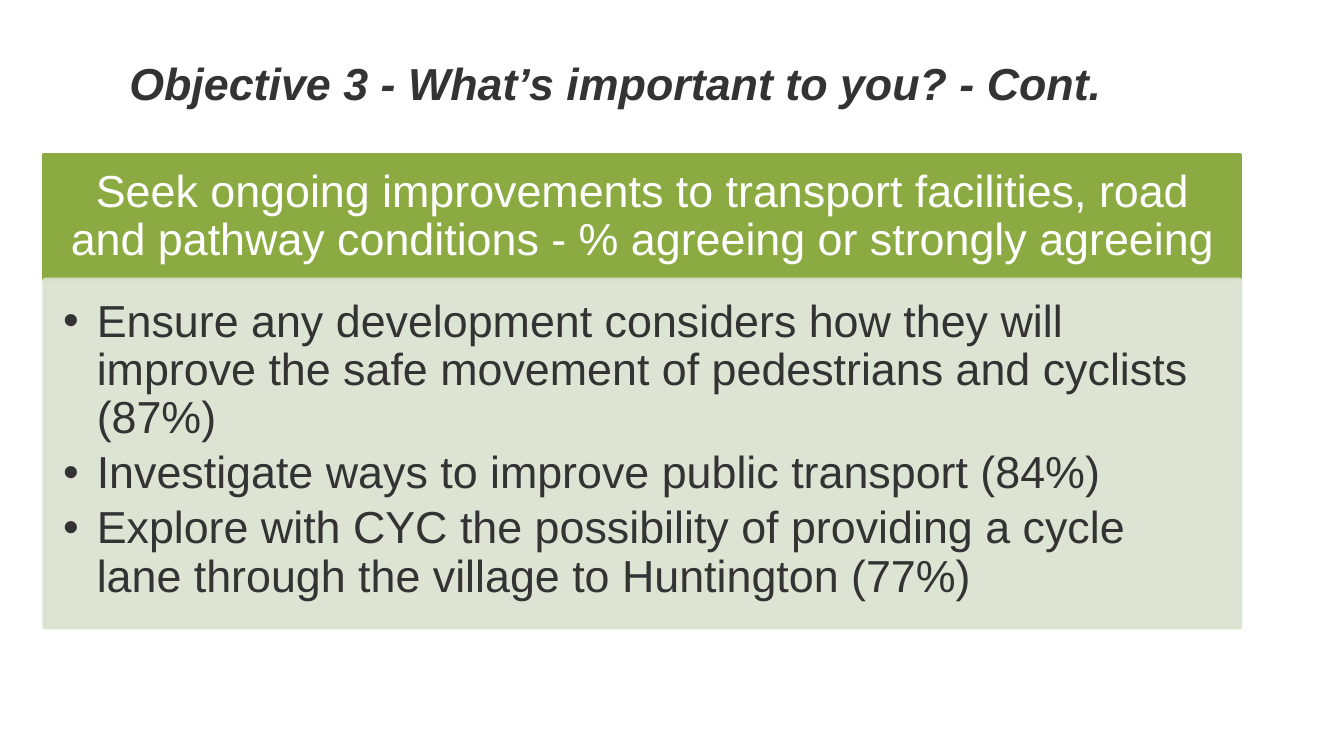
from pptx import Presentation
from pptx.dml.color import RGBColor
from pptx.enum.shapes import MSO_SHAPE
from pptx.enum.text import MSO_ANCHOR, MSO_AUTO_SIZE, PP_ALIGN
from pptx.oxml.ns import qn
from pptx.util import Inches, Pt
from lxml import etree

CENTER, LEFT = PP_ALIGN.CENTER, PP_ALIGN.LEFT
MIDDLE, TOP = MSO_ANCHOR.MIDDLE, MSO_ANCHOR.TOP

# Content
TITLE = "Objective 3 - What’s important to you? - Cont."
HEADING = ("Seek ongoing improvements to transport facilities, road and pathway "
           "conditions - % agreeing or strongly agreeing")
RESULTS = [
    "Ensure any development considers how they will improve the safe movement "
    "of pedestrians and cyclists (87%)",
    "Investigate ways to improve public transport (84%)",
    "Explore with CYC the possibility of providing a cycle lane through the "
    "village to Huntington (77%)",
]

# Style and layout
GREEN, PALE, DARK, WHITE = "8BAB42", "DAE2CF", "333333", "FFFFFF"
PANEL_LEFT, PANEL_TOP, PANEL_WIDTH = 0.33, 1.15, 8.9
HEADING_HEIGHT, LIST_HEIGHT = 0.93, 2.59


def color(value):
    return RGBColor.from_string(value)


def place(box, left, top, width, height):
    box.left, box.top = Inches(left), Inches(top)
    box.width, box.height = Inches(width), Inches(height)


def paint(box, value, opacity=100):
    box.fill.solid()
    box.fill.fore_color.rgb = color(value)
    box.line.width = Pt(2)
    box.line.color.rgb = color(value)
    if opacity < 100:
        for fill in box._element.spPr.iter(qn("a:srgbClr")):
            etree.SubElement(fill, qn("a:alpha"), val=str(opacity * 1000))


def write(box, texts, value, align, anchor, margins, spacing=1.0, after=0):
    frame = box.text_frame
    frame.word_wrap = True
    frame.auto_size = MSO_AUTO_SIZE.NONE
    frame.vertical_anchor = anchor
    (frame.margin_left, frame.margin_top,
     frame.margin_right, frame.margin_bottom) = map(Inches, margins)
    frame.text = "\n".join(texts)
    for para in frame.paragraphs:
        para.alignment = align
        para.line_spacing = spacing
        para.space_before, para.space_after = Pt(0), Pt(after)
        para.font.name, para.font.size = "Arial", Pt(24)
        para.font.color.rgb = color(value)


# A 16:9 page
deck = Presentation()
deck.slide_width = Inches(10)
deck.slide_height = deck.slide_width * 9 // 16
page = deck.slides.add_slide(deck.slide_layouts[1])

# Title
title = page.shapes.title
place(title, 0.13, 0.36, 9, 0.57)
write(title, [TITLE], DARK, CENTER, MIDDLE, (0.1, 0.05, 0.2, 0.11))
title_font = title.text_frame.paragraphs[0].font
title_font.bold = title_font.italic = True

# Heading band
heading = page.shapes.add_shape(MSO_SHAPE.RECTANGLE, 0, 0, 0, 0)
heading.shadow.inherit = False
place(heading, PANEL_LEFT, PANEL_TOP, PANEL_WIDTH, HEADING_HEIGHT)
paint(heading, GREEN)
write(heading, [HEADING], WHITE, CENTER, MIDDLE, (0.19, 0.11, 0.19, 0.11), 0.9)

# Bulleted results, in front of the heading band
results = page.placeholders[1]
place(results, PANEL_LEFT, PANEL_TOP + HEADING_HEIGHT, PANEL_WIDTH, LIST_HEIGHT)
paint(results, PALE, opacity=90)
write(results, RESULTS, DARK, LEFT, TOP, (0.14, 0.14, 0.19, 0.21), 0.9, after=3.6)
for para in results.text_frame.paragraphs:
    properties = para._p.get_or_add_pPr()
    properties.set("marL", str(Inches(0.25)))
    properties.set("indent", str(Inches(-0.25)))
heading._element.addnext(results._element)

deck.save("out.pptx")
